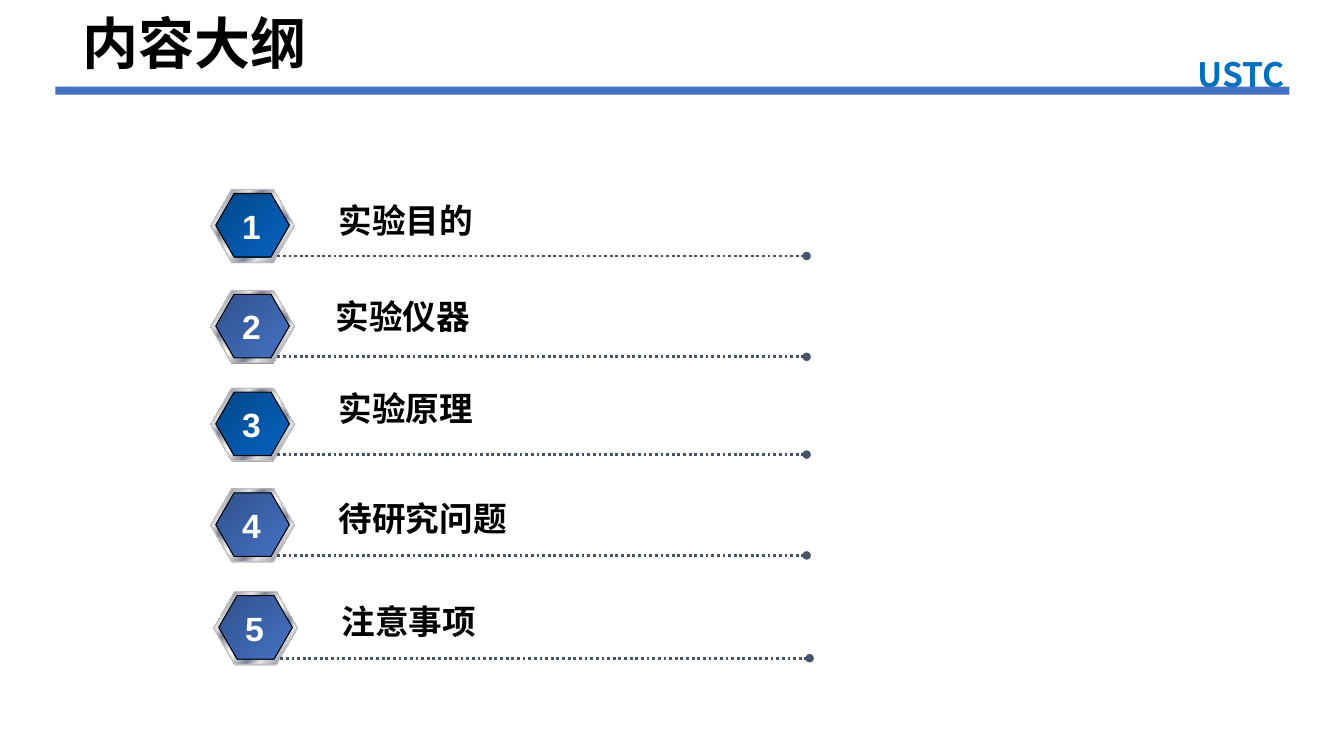
from dataclasses import dataclass

from lxml.etree import SubElement
from pptx import Presentation
from pptx.dml.color import RGBColor
from pptx.enum.dml import MSO_LINE
from pptx.enum.shapes import MSO_CONNECTOR, MSO_SHAPE
from pptx.enum.text import MSO_ANCHOR, MSO_AUTO_SIZE, PP_ALIGN
from pptx.oxml.ns import qn
from pptx.shapes.autoshape import Shape
from pptx.slide import Slide
from pptx.util import Inches, Pt

HUES = {
    "bar": "4472C4", "mark": "0070C0", "black": "000000", "white": "FFFFFF",
    "shade": "808080", "edge": "C0C0C0", "rule": "44546A",
    "light": "E6E6E6", "steel": "7D8496",
    "deep": "04478A", "sea": "0563C1", "navy": "31528C",
}
CJK = "Noto Sans CJK SC"
Stops = list[tuple[int, str]]
METAL: Stops = [
    (0, "light"), (8, "steel"), (26, "light"), (34, "steel"),
    (46, "light"), (50, "white"), (54, "light"), (66, "steel"),
    (74, "light"), (92, "steel"), (100, "light"),
]
OCEAN: Stops = [(0, "deep"), (100, "sea")]
DUSK: Stops = [(0, "navy"), (100, "bar")]


@dataclass
class Topic:
    name: str
    left: float
    top: float
    base: float
    fill: Stops
    shift: float = 0
    font: str = CJK


TOPICS = [
    Topic("实验目的", 2.09, 1.88, 1.93, OCEAN, font="Arial"),
    Topic("实验仪器", 2.09, 2.88, 2.89, DUSK, shift=-0.03),
    Topic("实验原理", 2.09, 3.85, 3.80, OCEAN),
    Topic("待研究问题", 2.09, 4.85, 4.89, DUSK),
    Topic("注意事项", 2.12, 5.87, 5.91, DUSK),
]


def color(name: str) -> RGBColor:
    return RGBColor.from_string(HUES[name])


def place(shape: Shape, *box: float) -> None:
    for key, size in zip(("left", "top", "width", "height"), box):
        setattr(shape, key, Inches(size))


def write(shape: Shape, text: str, size: int, hue: str, face: str = CJK,
          align: PP_ALIGN = PP_ALIGN.LEFT, wrap: bool = True) -> None:
    frame = shape.text_frame
    form = {"word_wrap": wrap, "auto_size": MSO_AUTO_SIZE.SHAPE_TO_FIT_TEXT,
            "vertical_anchor": MSO_ANCHOR.TOP}
    for key, value in form.items():
        setattr(frame, key, value)
    line = frame.paragraphs[0]
    line.alignment = align
    run = line.add_run()
    run.text = text
    for key, value in {"size": Pt(size), "bold": True, "name": face}.items():
        setattr(run.font, key, value)
    run.font.color.rgb = color(hue)
    SubElement(run.font._element, qn("a:ea"), typeface=CJK)


def label(slide: Slide, box: tuple[float, ...], *words, **form) -> Shape:
    shape = slide.shapes.add_textbox(*map(Inches, box))
    write(shape, *words, **form)
    return shape


def solid(slide: Slide, kind: MSO_SHAPE, box: tuple[float, ...], hue: str) -> Shape:
    shape = slide.shapes.add_shape(kind, *map(Inches, box))
    shape.shadow.inherit = False
    shape.fill.solid()
    shape.fill.fore_color.rgb = color(hue)
    shape.line.fill.background()
    return shape


def hexa(slide: Slide, box: tuple[float, ...]) -> Shape:
    shape = solid(slide, MSO_SHAPE.HEXAGON, box, "shade")
    shape.adjustments[0] = 0.289
    shape.adjustments[1] = 1.155
    return shape


def blend(shape: Shape, stops: Stops, edge: str) -> None:
    shape.fill.gradient()
    shape.fill.gradient_angle = 315
    group = shape._element.spPr.find(qn("a:gradFill")).find(qn("a:gsLst"))
    for old in list(group):
        group.remove(old)
    for spot, hue in stops:
        stop = SubElement(group, qn("a:gs"), pos=str(spot * 1000))
        SubElement(stop, qn("a:srgbClr"), val=HUES[hue])
    shape.line.color.rgb = color(edge)
    shape.line.width = Pt(0.75)


def rule(slide: Slide, left: float, top: float) -> None:
    link = slide.shapes.add_connector(
        MSO_CONNECTOR.STRAIGHT, *map(Inches, (left, top, left + 5.25, top)))
    link.line.color.rgb = color("rule")
    link.line.width = Pt(2)
    link.line.dash_style = MSO_LINE.ROUND_DOT
    SubElement(link.line._get_or_add_ln(), qn("a:tailEnd"), type="oval")
    SubElement(link._element.spPr, qn("a:effectLst"))


def draw(slide: Slide, order: int, topic: Topic) -> None:
    left, top = topic.left, topic.top
    hexa(slide, (left, top + 0.01, 0.83, 0.72))
    blend(hexa(slide, (left, top, 0.83, 0.72)), METAL, "edge")
    blend(hexa(slide, (left + 0.05, top + 0.04, 0.73, 0.63)), topic.fill, "black")
    rule(slide, left + 0.66, top + 0.66)
    width = 0.23 + 0.33 * len(topic.name)
    label(slide, (left + 1.17 + topic.shift, topic.base, width, 0.51),
          topic.name, 24, "black", face=topic.font, wrap=False)
    label(slide, (left + 0.21, top + 0.11, 0.39, 0.5), str(order), 24, "white",
          face="Arial", align=PP_ALIGN.CENTER, wrap=False)


def main() -> None:
    deck = Presentation()
    deck.slide_width, deck.slide_height = Inches(13.33), Inches(7.5)
    slide = deck.slides.add_slide(deck.slide_layouts[5])
    title = slide.shapes.title
    place(title, 0.72, 0.03, 2.6, 0.77)
    write(title, "内容大纲", 40, "black")
    mark = label(slide, (11.29, 0.49, 2.04, 0.5), "USTC", 24, "mark",
                 align=PP_ALIGN.CENTER)
    font = mark.text_frame.paragraphs[0].runs[0].font
    edge = SubElement(font._element, qn("a:ln"), w=str(Pt(0.75)))
    paint = SubElement(edge, qn("a:solidFill"))
    SubElement(paint, qn("a:srgbClr"), val=HUES["white"])
    font._element.insert(0, edge)
    solid(slide, MSO_SHAPE.RECTANGLE, (0.55, 0.86, 12.24, 0.08), "bar")
    for order, topic in enumerate(TOPICS, 1):
        draw(slide, order, topic)
    deck.save("out.pptx")


if __name__ == "__main__":
    main()
